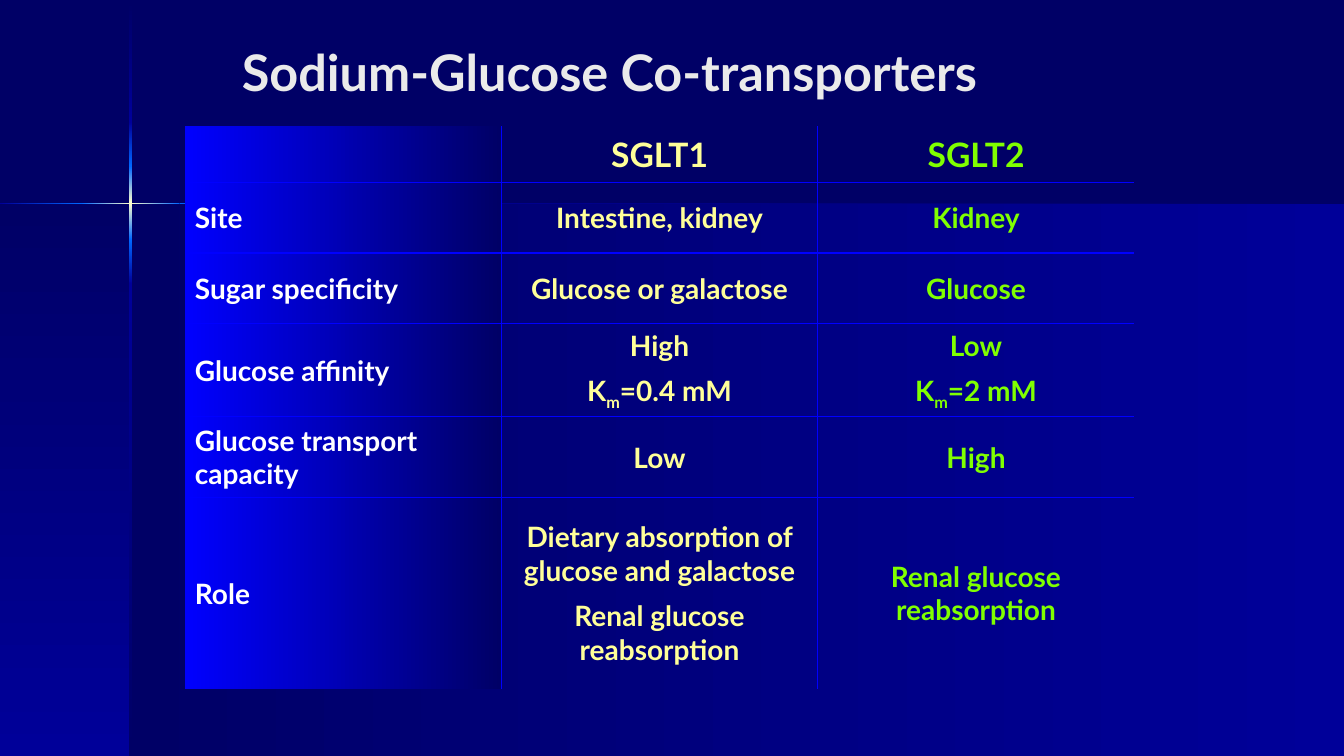
from itertools import pairwise

from lxml import etree
from pptx import Presentation
from pptx.dml.color import RGBColor
from pptx.enum.shapes import MSO_SHAPE
from pptx.enum.text import MSO_ANCHOR, MSO_AUTO_SIZE, PP_ALIGN
from pptx.oxml.ns import qn
from pptx.util import Pt

RECT = MSO_SHAPE.RECTANGLE
MIDDLE = MSO_ANCHOR.MIDDLE
NO_FIT = MSO_AUTO_SIZE.NONE
LEFT, CENTER = PP_ALIGN.LEFT, PP_ALIGN.CENTER

HUES = {
    "navy": "000066", "blue": "000099", "sky": "0066FF", "cream": "FFFFCC",
    "title": "EAEAEA", "line": "0000FF", "white": "FFFFFF",
    "yellow": "FFFF99", "green": "80FF00",
}

# A bar splits a text into normal, subscript and normal parts.
ROWS = [
    (40.3, [[], ["SGLT1"], ["SGLT2"]]),
    (50.4, [["Site"], ["Intestine, kidney"], ["Kidney"]]),
    (50.4, [["Sugar specificity"], ["Glucose or galactose"], ["Glucose"]]),
    (64.8, [["Glucose affinity"], ["High", "K|m|=0.4 mM"],
            ["Low", "K|m|=2 mM"]]),
    (57.6, [["Glucose transport capacity"], ["Low"], ["High"]]),
    (136.8, [["Role"],
             ["Dietary absorption of glucose and galactose",
              "Renal glucose reabsorption"],
             ["Renal glucose reabsorption"]]),
]
COLS = [("white", LEFT), ("yellow", CENTER), ("green", CENTER)]

FADES = [("navy", "blue"), ("blue", "sky"), ("sky", "cream", "sky"),
         ("sky", "blue"), ("blue", "navy")]


class Deck:
    font = "Lato"

    def __init__(self, wide, high):
        self.file = Presentation()
        self.file.slide_width, self.file.slide_height = Pt(wide), Pt(high)
        self.slide = self.file.slides.add_slide(self.file.slide_layouts[5])
        fill = self.slide.background.fill
        fill.solid()
        fill.fore_color.rgb = self.color("navy")

    def color(self, name):
        return RGBColor.from_string(HUES[name])

    def fade(self, fill, node, names, down=False):
        """Fill with evenly spaced gradient stops, rightward or downward."""
        fill.gradient()
        fill.gradient_angle = 270 if down else 0
        stops = node.find(".//" + qn("a:gsLst"))
        for old in list(stops):
            stops.remove(old)
        for i, name in enumerate(names):
            stop = etree.SubElement(stops, qn("a:gs"),
                                    pos=str(100000 * i // (len(names) - 1)))
            etree.SubElement(stop, qn("a:srgbClr"), val=HUES[name])

    def bar(self, box, names, down=False):
        shape = self.slide.shapes.add_shape(RECT, *map(Pt, box))
        shape.shadow.inherit = False
        shape.line.fill.background()
        self.fade(shape.fill, shape._element.spPr, names, down)

    def text(self, para, words, size, hue, align):
        para.alignment = align
        for i, part in enumerate(words.split("|")):
            run = para.add_run()
            run.text = part
            look = {"name": self.font, "size": Pt(size), "bold": True}
            for key, value in look.items():
                setattr(run.font, key, value)
            run.font.color.rgb = self.color(hue)
            if i == 1:
                run._r.get_or_add_rPr().set("baseline", "-25000")

    def title(self, words, box):
        shape = self.slide.shapes.title
        places = zip(("left", "top", "width", "height"), box)
        for key, value in places:
            setattr(shape, key, Pt(value))
        frame = shape.text_frame
        look = {"vertical_anchor": MIDDLE, "auto_size": NO_FIT,
                "word_wrap": True, "margin_left": Pt(28.8),
                "margin_right": Pt(7.2), "margin_top": Pt(3.6),
                "margin_bottom": Pt(3.6)}
        for key, value in look.items():
            setattr(frame, key, value)
        self.text(frame.paragraphs[0], words, 36, "title", LEFT)

    def edges(self, cell, inner):
        """Draw the sides that are inner and hide the others."""
        props = cell._tc.get_or_add_tcPr()
        for i, (side, shown) in enumerate(inner.items()):
            line = etree.Element(qn("a:ln" + side), w=str(Pt(1)))
            if shown:
                fill = etree.SubElement(line, qn("a:solidFill"))
                etree.SubElement(fill, qn("a:srgbClr"), val=HUES["line"])
            else:
                etree.SubElement(line, qn("a:noFill"))
            props.insert(i, line)

    def table(self, left, top, width):
        high = sum(row[0] for row in ROWS)
        grid = self.slide.shapes.add_table(
            len(ROWS), len(COLS), *map(Pt, (left, top, width, high))).table
        grid.horz_banding = grid.first_row = False
        for col in grid.columns:
            col.width = Pt(width / len(COLS))
        for r, (tall, texts) in enumerate(ROWS):
            grid.rows[r].height = Pt(tall)
            for c, (hue, align) in enumerate(COLS):
                cell = grid.cell(r, c)
                cell.vertical_anchor = MIDDLE
                if c == 0:
                    self.fade(cell.fill, cell._tc, ("line", "navy"))
                else:
                    cell.fill.background()
                self.edges(cell, {"L": c > 0, "R": c < len(COLS) - 1,
                                  "T": r > 0, "B": r < len(ROWS) - 1})
                frame = cell.text_frame
                for i, words in enumerate(texts[c]):
                    para = frame.add_paragraph() if i else frame.paragraphs[0]
                    if i:
                        para.space_before = Pt(8)
                    self.text(para, words, 20 if r else 24, hue, align)


def main():
    deck = Deck(960, 540)
    deck.bar((92.9, 145.4, 867.1, 394.6), ("navy", "blue"))
    deck.bar((0, 145.4, 92.9, 394.6), ("navy", "blue"), True)
    for (top, end), names in zip(
            pairwise((0.7, 87.1, 118.8, 171.4, 203, 540)), FADES):
        deck.bar((92.2, top, 2.1, end - top), names, True)
    for (left, end), names in zip(
            pairwise((0, 58.3, 128.2, 169.9, 960)), FADES[1:]):
        deck.bar((left, 144.7, end - left, 1.4), names)
    deck.title("Sodium-Glucose Co-transporters", (144, -5.8, 653.8, 113))
    deck.table(132, 90, 678.2)
    deck.file.save("out.pptx")


if __name__ == "__main__":
    main()
